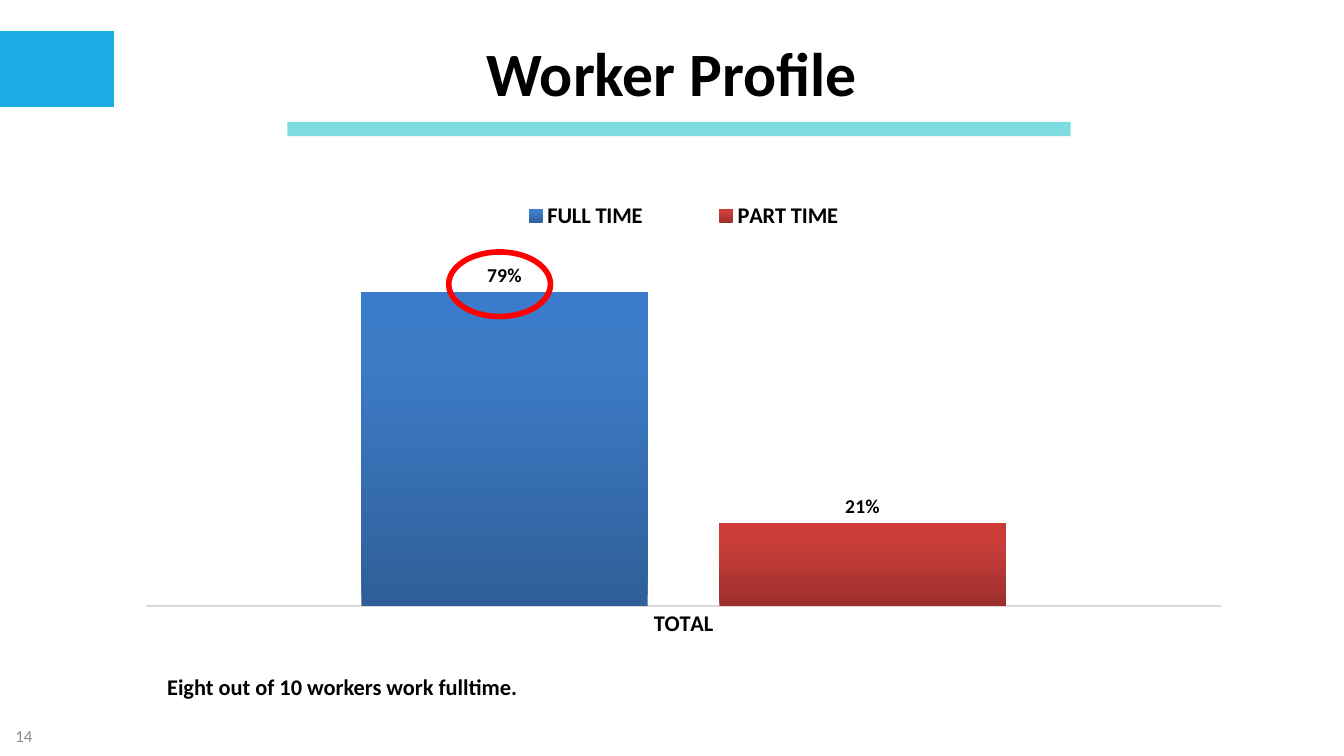
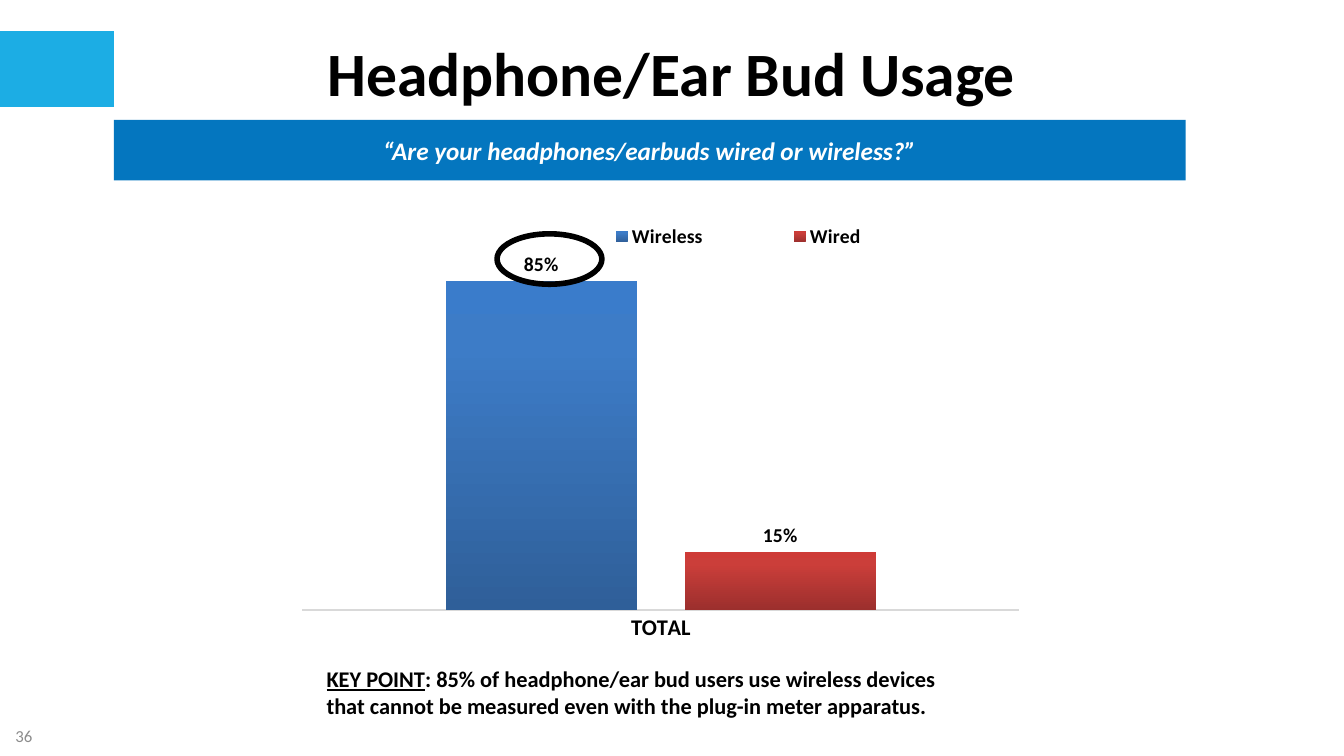
from lxml import etree
from pptx import Presentation, util as u
from pptx.chart.data import CategoryChartData
from pptx.dml.color import RGBColor
from pptx.enum import chart as ch, shapes, text
from pptx.oxml import parse_xml
from pptx.oxml.ns import nsdecls, qn

WIDTH, HEIGHT = 13.33, 7.5
FONT = "Calibri"
COLORS = {
    "black": "000000", "white": "FFFFFF", "grey": "8C8C8C", "axis": "D9D9D9",
    "tab": "1CADE4", "rule": "28C4CC", "question": "0476BF", "red": "FF0000",
}
GRADIENTS = [
    [(0, "2F5F99"), (80, "3D7CC7"), (100, "3A7CCB")],
    [(0, "9C2F2D"), (80, "CB3E3A"), (100, "CE3B37")],
]
SLIDES = [
    {
        "title": "Worker Profile",
        "page": "14",
        "rule": (2.85, 1.21, 7.77, 0.14),
        "shares": [("FULL TIME", 0.79), ("PART TIME", 0.21)],
        "chart": (1.23, 1.92, 11.1, 4.5),
        "plot": (0.02, 0.12, 0.96, 0.79),
        "legend_size": 16,
        "legend": (0.3, 0.01, 0.4, 0.08),
        "ring": ((4.45, 2.5, 1.01, 0.64), "red"),
        "takeaway": [("Eight out of 10 workers work fulltime.", {})],
        "takeaway_box": (1.56, 6.63, 8.03, 0.37),
    },
    {
        "title": "Headphone/Ear Bud Usage",
        "page": "36",
        "question": "“Are your headphones/earbuds wired or wireless?”",
        "question_box": (1.13, 1.19, 10.63, 0.6),
        "shares": [("Wireless", 0.85), ("Wired", 0.15)],
        "chart": (2.99, 2.05, 7.34, 4.55),
        "plot": (0, 0.12, 0.97, 0.76),
        "legend_size": 14,
        "legend": (0.31, 0.02, 0.56, 0.09),
        "ring": ((4.93, 2.32, 1.04, 0.5), "black"),
        "takeaway": [
            ("KEY POINT", {"underline": True}),
            (": 85% of headphone/ear bud users use wireless devices that cannot "
             "be measured even with the plug-in meter apparatus.", {}),
        ],
        "takeaway_box": (3.14, 6.55, 6.65, 0.64),
    },
]


def rgb(name):
    return RGBColor.from_string(COLORS[name])


def inches(box):
    return [u.Inches(length) for length in box]


def style(font, size, color="black", bold=True, **extras):
    font.name, font.size, font.bold = FONT, u.Pt(size), bold
    font.color.rgb = rgb(color)
    for key, value in extras.items():
        setattr(font, key, value)


def write(frame, runs, size, align=text.PP_ALIGN.LEFT,
          anchor=text.MSO_ANCHOR.MIDDLE, **look):
    frame.word_wrap = True
    frame.vertical_anchor = anchor
    line = frame.paragraphs[0]
    line.alignment = align
    for words, extras in runs:
        run = line.add_run()
        run.text = words
        style(run.font, size, **look, **extras)


def add_text(slide, box, runs, size, **look):
    frame = slide.shapes.add_textbox(*inches(box)).text_frame
    write(frame, runs, size, **look)
    return frame


def add_band(slide, box, color, opacity=100):
    band = slide.shapes.add_shape(shapes.MSO_SHAPE.RECTANGLE, *inches(box))
    band.shadow.inherit = False
    band.fill.solid()
    band.fill.fore_color.rgb = rgb(color)
    band.line.fill.background()
    if opacity < 100:
        tint = band.fill._xPr.find(".//" + qn("a:srgbClr"))
        etree.SubElement(tint, qn("a:alpha")).set("val", str(opacity * 1000))
    return band


def add_ring(slide, box, color):
    ring = slide.shapes.add_shape(shapes.MSO_SHAPE.OVAL, *inches(box))
    ring.shadow.inherit = False
    ring.fill.background()
    ring.line.color.rgb = rgb(color)
    ring.line.width = u.Pt(4)


def paint_gradient(series, stops):
    marks = "".join(
        f'<a:gs pos="{share * 1000}"><a:srgbClr val="{color}"/></a:gs>'
        for share, color in stops)
    series.format.fill.background()
    bar = series._element.find(qn("c:spPr"))
    bar.replace(bar.find(qn("a:noFill")), parse_xml(
        f'<a:gradFill {nsdecls("a")} rotWithShape="1"><a:gsLst>{marks}</a:gsLst>'
        '<a:lin ang="16200000" scaled="0"/></a:gradFill>'))


def place(part, shares, inner=False):
    for old in part.findall(qn("c:layout")):
        part.remove(old)
    target = '<c:layoutTarget val="inner"/>' if inner else ""
    modes = "".join(f'<c:{axis}Mode val="edge"/>' for axis in "xy")
    sizes = "".join(f'<c:{side} val="{share}"/>' for side, share in zip("xywh", shares))
    layout = parse_xml(
        f'<c:layout {nsdecls("c")}><c:manualLayout>{target}{modes}{sizes}'
        '</c:manualLayout></c:layout>')
    if inner:
        part.insert(0, layout)
    else:
        part.find(qn("c:legendPos")).addnext(layout)


def add_share_chart(slide, content):
    data = CategoryChartData(number_format="0%")
    data.categories = ["TOTAL"]
    for name, share in content["shares"]:
        data.add_series(name, [share])
    chart = slide.shapes.add_chart(
        ch.XL_CHART_TYPE.COLUMN_CLUSTERED, *inches(content["chart"]), data).chart
    chart.has_title = False
    style(chart.font, 10, bold=False)

    chart.has_legend = True
    chart.legend.position = ch.XL_LEGEND_POSITION.TOP
    chart.legend.include_in_layout = False
    style(chart.legend.font, content["legend_size"])
    place(chart.legend._element, content["legend"])

    values = chart.value_axis
    values.minimum_scale, values.maximum_scale = 0, 0.9
    values.has_major_gridlines = False
    values.visible = False
    total = chart.category_axis
    total.major_tick_mark = ch.XL_TICK_MARK.NONE
    total.format.line.color.rgb = rgb("axis")
    total.format.line.width = u.Pt(1)
    style(total.tick_labels.font, 16)

    columns = chart.plots[0]
    columns.gap_width, columns.overlap = 150, -25
    columns.vary_by_categories = False
    for series, stops in zip(columns.series, GRADIENTS):
        paint_gradient(series, stops)
        labels = series.data_labels
        labels.show_value = True
        labels.number_format, labels.number_format_is_linked = "0%", False
        labels.position = ch.XL_LABEL_POSITION.OUTSIDE_END
        style(labels.font, 14)
    place(values._element.getparent(), content["plot"], inner=True)


def add_frame(slide, content):
    add_band(slide, (0, 0.31, 1.13, 0.75), "tab")
    add_text(slide, (2.3, 0.31, 8.73, 0.81), [(content["title"], {})], 44,
             align=text.PP_ALIGN.CENTER)
    number = add_text(slide, (0, 7.1, 0.42, 0.4), [(content["page"], {})], 12,
                      align=text.PP_ALIGN.RIGHT, color="grey", bold=False)
    number.margin_left = 0


def build(deck, content):
    slide = deck.slides.add_slide(deck.slide_layouts[6])
    add_frame(slide, content)
    add_share_chart(slide, content)
    add_ring(slide, *content["ring"])
    if "rule" in content:
        add_band(slide, content["rule"], "rule", opacity=60)
    if "question" in content:
        band = add_band(slide, content["question_box"], "question")
        write(band.text_frame, [(content["question"], {})], 18,
              align=text.PP_ALIGN.CENTER, color="white", italic=True)
    add_text(slide, content["takeaway_box"], content["takeaway"], 16,
             anchor=text.MSO_ANCHOR.TOP)


def main():
    deck = Presentation()
    deck.slide_width, deck.slide_height = inches((WIDTH, HEIGHT))
    for content in SLIDES:
        build(deck, content)
    deck.save("out.pptx")


if __name__ == "__main__":
    main()
